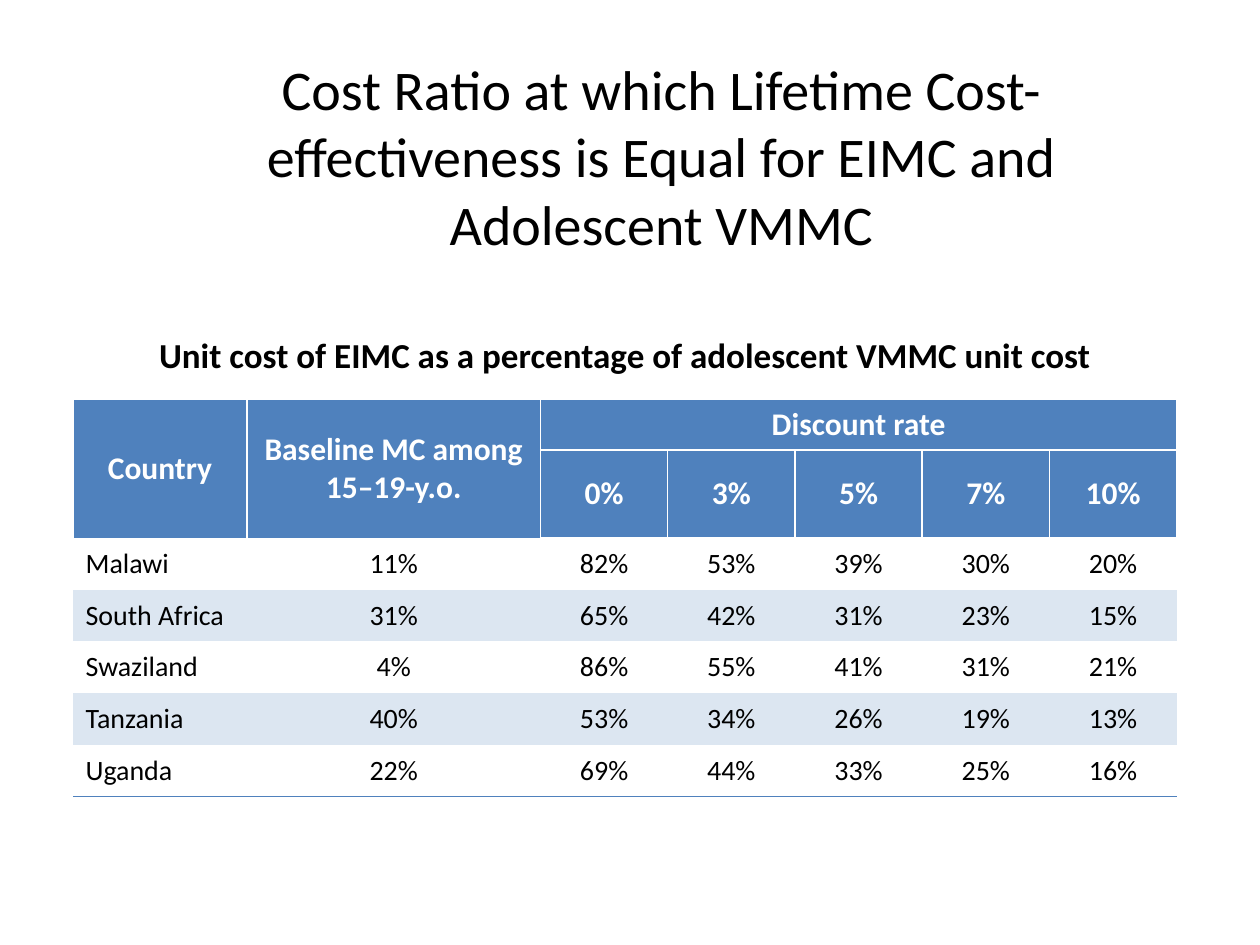
"""Build the slide on the cost ratio of EIMC to adolescent VMMC."""
from dataclasses import dataclass

from lxml.etree import SubElement
from pptx import Presentation
from pptx.dml.color import RGBColor
from pptx.enum.text import MSO_ANCHOR, MSO_AUTO_SIZE, PP_ALIGN
from pptx.oxml.ns import qn
from pptx.table import Table, _Cell
from pptx.text.text import TextFrame
from pptx.util import Inches, Pt

BLUE, PALE, WHITE, BLACK = "4F81BD", "DCE6F1", "FFFFFF", "000000"
NO_STYLE = "{2D5ABB26-0587-4C30-8999-92F81FD0307C}"
RATES = ["0%", "3%", "5%", "7%", "10%"]
WIDTHS = [1.38, 2.33] + [1.01] * len(RATES)


@dataclass
class Nation:
    name: str
    base: int
    costs: list[int]


NATIONS = [
    Nation("Malawi", 11, [82, 53, 39, 30, 20]),
    Nation("South Africa", 31, [65, 42, 31, 23, 15]),
    Nation("Swaziland", 4, [86, 55, 41, 31, 21]),
    Nation("Tanzania", 40, [53, 34, 26, 19, 13]),
    Nation("Uganda", 22, [69, 44, 33, 25, 16]),
]


def color(code: str) -> RGBColor:
    return RGBColor.from_string(code)


def write(frame: TextFrame, text: str, *, size: int, ink: str = BLACK,
          bold: bool = False, align: PP_ALIGN = PP_ALIGN.CENTER) -> None:
    frame.word_wrap = True
    para = frame.paragraphs[0]
    para.alignment = align
    run = para.add_run()
    run.text = text
    run.font.name = "Calibri"
    run.font.size = Pt(size)
    run.font.bold = bold
    run.font.color.rgb = color(ink)


def edge(cell: _Cell, sides: str, ink: str) -> None:
    props = cell._tc.get_or_add_tcPr()
    for side in sides:
        line = SubElement(props, qn(f"a:ln{side}"), w=str(Pt(1)))
        fill = SubElement(line, qn("a:solidFill"))
        SubElement(fill, qn("a:srgbClr"), val=ink)


def put(cell: _Cell, text: str, *, fill: str, sides: str = "",
        line: str = WHITE, **style) -> None:
    edge(cell, sides, line)
    cell.fill.solid()
    cell.fill.fore_color.rgb = color(fill)
    cell.vertical_anchor = MSO_ANCHOR.MIDDLE
    write(cell.text_frame, text, **style)


def draw_head(table: Table) -> None:
    style = dict(fill=BLUE, sides="LRT", size=18, ink=WHITE, bold=True)
    for col, text in enumerate(["Country", "Baseline MC among 15–19-y.o."]):
        table.cell(0, col).merge(table.cell(1, col))
        put(table.cell(0, col), text, **style)
    table.cell(0, 2).merge(table.cell(0, len(WIDTHS) - 1))
    put(table.cell(0, 2), "Discount rate", **style | {"sides": "LRTB"})
    for col, rate in enumerate(RATES, 2):
        put(table.cell(1, col), rate, **style)


def draw_row(table: Table, row: int, nation: Nation) -> None:
    last = row == len(table.rows) - 1
    style = dict(fill=PALE if row % 2 else WHITE, size=16,
                 sides="B" if last else "", line=BLUE)
    put(table.cell(row, 0), nation.name, align=PP_ALIGN.LEFT, **style)
    for col, value in enumerate([nation.base, *nation.costs], 1):
        put(table.cell(row, col), f"{value}%", **style)


def main() -> None:
    deck = Presentation()
    deck.slide_width, deck.slide_height = Inches(10), Inches(7.5)
    slide = deck.slides.add_slide(deck.slide_layouts[5])

    title = slide.shapes.title
    title.left, title.top = Inches(1), Inches(0.3)
    title.width, title.height = Inches(8.5), Inches(1.87)
    title.text_frame.auto_size = MSO_AUTO_SIZE.NONE
    title.text_frame.vertical_anchor = MSO_ANCHOR.MIDDLE
    write(title.text_frame, "Cost Ratio at which Lifetime Cost-effectiveness "
          "is Equal for EIMC and Adolescent VMMC", size=32)

    label = slide.shapes.add_textbox(
        Inches(0.75), Inches(2.6), Inches(8.42), Inches(0.44))
    label.text_frame.auto_size = MSO_AUTO_SIZE.SHAPE_TO_FIT_TEXT
    write(label.text_frame, "Unit cost of EIMC as a percentage of "
          "adolescent VMMC unit cost", size=20, bold=True)

    highs = [0.35] * 2 + [0.41] * len(NATIONS)
    table = slide.shapes.add_table(
        len(highs), len(WIDTHS), Inches(0.58), Inches(3.17),
        Inches(sum(WIDTHS)), Inches(sum(highs))).table
    table._tbl.tblPr.find(qn("a:tableStyleId")).text = NO_STYLE
    table.horz_banding = False
    for col, wide in zip(table.columns, WIDTHS):
        col.width = Inches(wide)
    for row, high in zip(table.rows, highs):
        row.height = Inches(high)
    draw_head(table)
    for row, nation in enumerate(NATIONS, 2):
        draw_row(table, row, nation)

    deck.save("out.pptx")


if __name__ == "__main__":
    main()
